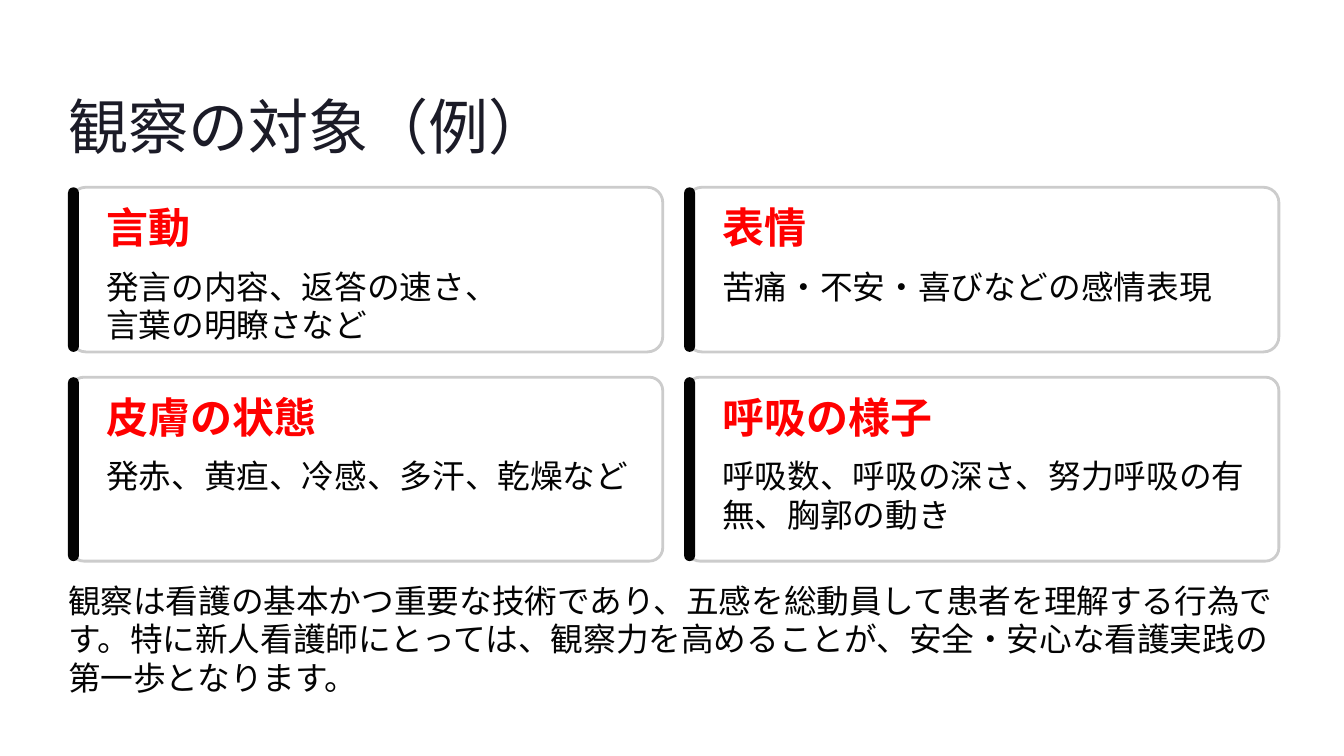
import pptx
import pptx.util
import pptx.dml.color
import pptx.enum.shapes
import pptx.oxml
import pptx.oxml.ns
from lxml import etree

RGBColor = pptx.dml.color.RGBColor
Inches = pptx.util.Inches
Pt = pptx.util.Pt
ROUNDED = pptx.enum.shapes.MSO_SHAPE.ROUNDED_RECTANGLE

WHITE = RGBColor(0xFF, 0xFF, 0xFF)
BORDER = RGBColor(0xCC, 0xCC, 0xCC)
BLACK = RGBColor(0x03, 0x03, 0x03)
RED = RGBColor(0xFF, 0x00, 0x00)
NAVY = RGBColor(0x1B, 0x1B, 0x27)

# Grid in inches: column lefts; row top, height and corner ratio
MARGIN = 0.81
COLUMNS = [MARGIN, MARGIN + 7.335]
ROWS = [(2.23, 1.96, 0.093), (4.49, 2.19, 0.073)]
CARD_WIDTH = 7.05
BAR_WIDTH = 0.13
INDENT = 0.455

# Heading, lines, whether the lines wrap; two cards to a row
CARDS = [
    ("言動", ["発言の内容、返答の速さ、", "言葉の明瞭さなど"], False),
    ("表情", ["苦痛・不安・喜びなどの感情表現"], False),
    ("皮膚の状態", ["発赤、黄疸、冷感、多汗、乾燥など"], False),
    ("呼吸の様子", ["呼吸数、呼吸の深さ、努力呼吸の有無、胸郭の動き"], True),
]
SUMMARY = (
    "観察は看護の基本かつ重要な技術であり、五感を総動員して患者を理解する行為です。"
    "特に新人看護師にとっては、観察力を高めることが、安全・安心な看護実践の第一歩となります。"
)
BODY = dict(size=28, spacing=33, font="Cabin", color=BLACK)
HEADING = dict(size=36, spacing=32, font="Inter", color=RED, bold=True)


def add_text(slide, lines, left, top, width, height, *, size, spacing, font,
             color, bold=False, wrap=False):
    frame = slide.shapes.add_textbox(
        Inches(left), Inches(top), Inches(width), Inches(height)).text_frame
    frame.word_wrap = wrap
    frame.margin_left = frame.margin_right = 0
    frame.margin_top = frame.margin_bottom = 0
    for index, line in enumerate(lines):
        paragraph = frame.add_paragraph() if index else frame.paragraphs[0]
        paragraph.line_spacing = Pt(spacing)
        run = paragraph.add_run()
        run.text = line
        run.font.size = Pt(size)
        run.font.name = font
        run.font.bold = bold
        run.font.color.rgb = color


def add_panel(slide, left, top, width, height, corner, fill):
    panel = slide.shapes.add_shape(
        ROUNDED, Inches(left), Inches(top), Inches(width), Inches(height))
    panel.adjustments[0] = corner
    panel.shadow.inherit = False
    panel.fill.solid()
    panel.fill.fore_color.rgb = fill
    panel.line.fill.background()
    return panel


def add_card(slide, column, row, heading, lines, wrap):
    left = COLUMNS[column]
    top, height, corner = ROWS[row]

    # Slightly transparent panel with a grey border
    panel = add_panel(slide, left + 0.03, top, CARD_WIDTH, height, corner, WHITE)
    panel.line.color.rgb = BORDER
    panel.line.width = Pt(2.4)
    qn = pptx.oxml.ns.qn
    fill_color = panel.fill._xPr.find(qn("a:solidFill")).find(qn("a:srgbClr"))
    etree.SubElement(fill_color, qn("a:alpha"), val="95000")

    # Accent bar
    add_panel(slide, left, top, BAR_WIDTH, height, 0.5, BLACK)

    # Heading and description
    text_left = left + INDENT
    add_text(slide, [heading], text_left, top + 0.33, 3.61, 0.45, **HEADING)
    add_text(slide, lines, text_left, top + 0.95, 6.3, 0.92 if wrap else 0.46,
             wrap=wrap, **BODY)


def main():
    deck = pptx.Presentation()
    deck.slide_width = Inches(16)
    deck.slide_height = Inches(9)
    slide = deck.slides.add_slide(deck.slide_layouts[6])

    # Title
    add_text(slide, ["観察の対象（例）"], MARGIN, 1.03, 7.21, 0.9,
             size=51.5, spacing=64.5, font="Inter", color=NAVY)

    # Cards, two by two
    for index, (heading, lines, wrap) in enumerate(CARDS):
        row, column = divmod(index, len(COLUMNS))
        add_card(slide, column, row, heading, lines, wrap)

    # Summary
    add_text(slide, [SUMMARY], MARGIN, 6.92, 14.38, 0.92, wrap=True, **BODY)

    deck.save("out.pptx")


if __name__ == "__main__":
    main()
